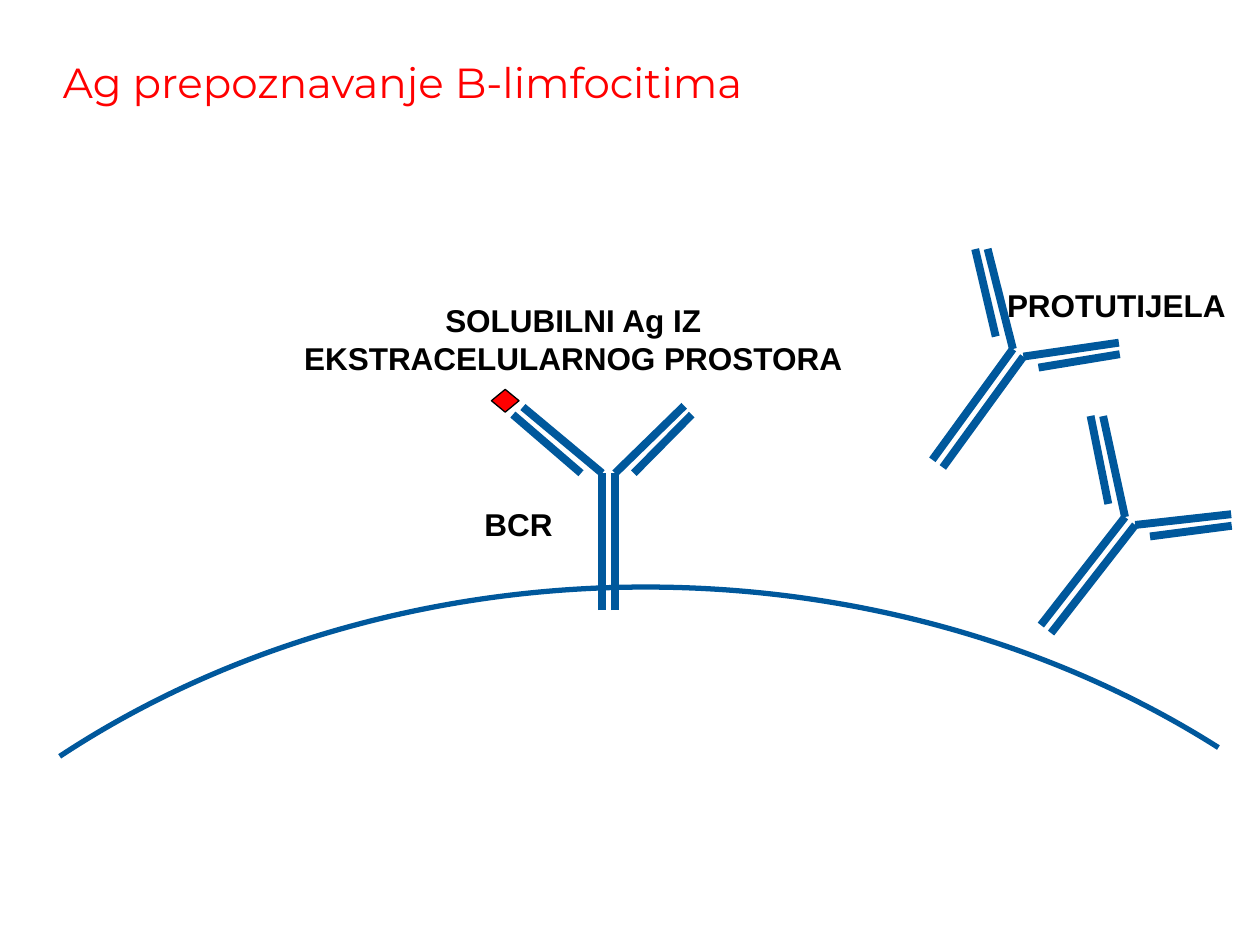
from dataclasses import dataclass
from math import cos, radians, sin

from lxml.etree import SubElement
from pptx import Presentation
from pptx.dml.color import RGBColor
from pptx.enum.shapes import MSO_CONNECTOR, MSO_SHAPE
from pptx.enum.text import MSO_ANCHOR, MSO_AUTO_SIZE, PP_ALIGN
from pptx.oxml.ns import qn
from pptx.util import Pt


@dataclass(frozen=True)
class Theme:
    blue: RGBColor = RGBColor(0x00, 0x58, 0x9C)
    red: RGBColor = RGBColor(0xFF, 0x00, 0x00)
    black: RGBColor = RGBColor(0x00, 0x00, 0x00)
    title_font: str = "Montserrat"
    label_font: str = "Arial"
    title_size: int = 24
    label_size: int = 18
    chain_width: float = 4.5
    membrane_width: float = 3
    antigen_outline: float = 0.75


THEME = Theme()

TITLE = "Ag prepoznavanje B-limfocitima"
TITLE_BOX = (36, 32.4, 482.4, 72.7)

# Label lines and box (left, top, width, height)
LABELS = [
    (["BCR"], (269.3, 285.1, 54, 28.8)),
    (["SOLUBILNI Ag IZ", "EKSTRACELULARNOG PROSTORA"], (164.9, 168.5, 325.4, 51.1)),
    (["PROTUTIJELA"], (567.4, 159.8, 141.1, 28.8)),
]

# Chains of an upright antibody, measured from its hinge
CHAINS = [
    ((-3.7, 78.3), (-3.7, 0)),
    ((3.7, 78.3), (3.7, 0)),
    ((43.2, -38.5), (3.7, 0)),
    ((47.5, -33.5), (14.4, 0)),
    ((-49, -37.8), (-3.7, 0)),
    ((-54.7, -33.5), (-15.8, 0)),
]

# Hinge position and clockwise turn in degrees: the BCR, then free antibodies
ANTIBODIES = [
    ((347.8, 270.4), 0),
    ((581.8, 201.6), 36),
    ((645.8, 297.7), 37.9),
]

MEMBRANE_BOX = (-163.4, 335.5, 1064.9, 869)
MEMBRANE_ANGLES = (225.24, 313.67)
ANTIGEN_BOX = (280.8, 222.5, 15.8, 13)


def points(values):
    return [Pt(value) for value in values]


def add_run(paragraph, text, font_name, size, color, bold=False):
    run = paragraph.add_run()
    run.text = text
    run.font.name = font_name
    run.font.size = Pt(size)
    run.font.bold = bold
    run.font.color.rgb = color


def add_title(slide):
    frame = slide.shapes.add_textbox(*points(TITLE_BOX)).text_frame
    frame.word_wrap = True
    frame.vertical_anchor = MSO_ANCHOR.TOP
    frame.margin_left = frame.margin_right = 0
    frame.margin_top = frame.margin_bottom = 0
    add_run(frame.paragraphs[0], TITLE, THEME.title_font, THEME.title_size, THEME.red)


def add_label(slide, lines, box):
    frame = slide.shapes.add_textbox(*points(box)).text_frame
    frame.word_wrap = False
    frame.auto_size = MSO_AUTO_SIZE.SHAPE_TO_FIT_TEXT
    for index, line in enumerate(lines):
        paragraph = frame.add_paragraph() if index else frame.paragraphs[0]
        paragraph.alignment = PP_ALIGN.CENTER
        add_run(paragraph, line, THEME.label_font, THEME.label_size, THEME.black, True)


def add_membrane(slide):
    arc = slide.shapes.add_shape(MSO_SHAPE.ARC, *points(MEMBRANE_BOX))
    arc.shadow.inherit = False
    arc.fill.background()
    arc.line.color.rgb = THEME.blue
    arc.line.width = Pt(THEME.membrane_width)
    for index, degrees in enumerate(MEMBRANE_ANGLES):
        # Angles are stored in 1/60000 degree; adjustments scale by 100000
        arc.adjustments[index] = degrees * 0.6


def add_antigen(slide):
    antigen = slide.shapes.add_shape(MSO_SHAPE.DIAMOND, *points(ANTIGEN_BOX))
    antigen.shadow.inherit = False
    antigen.fill.solid()
    antigen.fill.fore_color.rgb = THEME.red
    antigen.line.color.rgb = THEME.black
    antigen.line.width = Pt(THEME.antigen_outline)


def place(point, hinge, turn):
    """Turn a chain point clockwise about the hinge and move it onto the slide."""
    x, y = point
    angle = radians(turn)
    return (hinge[0] + x * cos(angle) - y * sin(angle),
            hinge[1] + x * sin(angle) + y * cos(angle))


def add_antibody(slide, hinge, turn):
    for start, end in CHAINS:
        ends = place(start, hinge, turn) + place(end, hinge, turn)
        chain = slide.shapes.add_connector(MSO_CONNECTOR.STRAIGHT, *points(ends))
        chain.line.color.rgb = THEME.blue
        chain.line.width = Pt(THEME.chain_width)
        SubElement(chain._element.spPr, qn("a:effectLst"))


def main():
    presentation = Presentation()
    presentation.slide_width, presentation.slide_height = Pt(720), Pt(540)
    slide = presentation.slides.add_slide(presentation.slide_layouts[6])
    add_title(slide)
    add_membrane(slide)
    for hinge, turn in ANTIBODIES:
        add_antibody(slide, hinge, turn)
    add_antigen(slide)
    for lines, box in LABELS:
        add_label(slide, lines, box)
    presentation.save("out.pptx")


if __name__ == "__main__":
    main()
